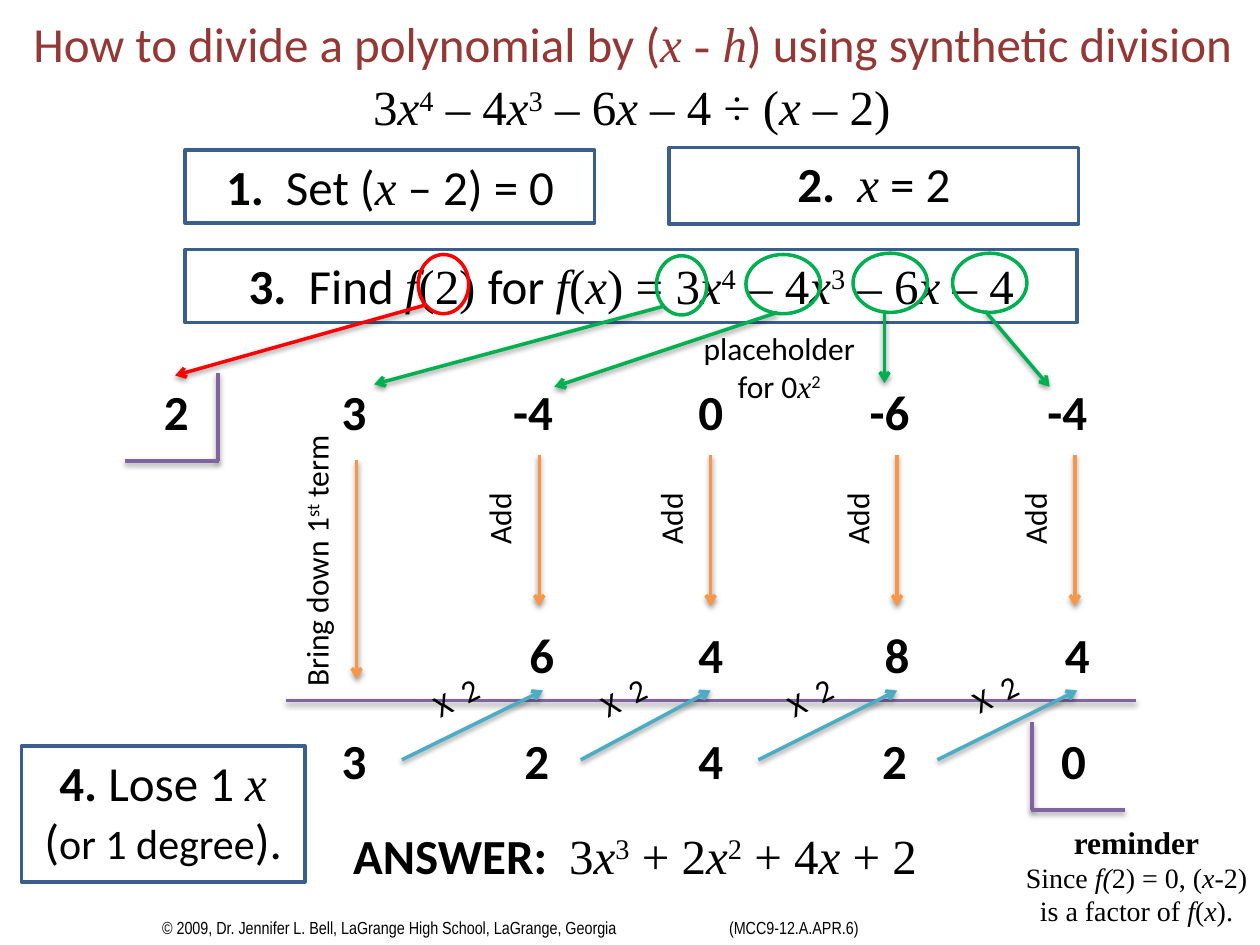
from itertools import groupby

from lxml import etree
from pptx import Presentation
from pptx.dml.color import RGBColor
from pptx.enum.shapes import MSO_CONNECTOR, MSO_SHAPE
from pptx.enum.text import PP_ALIGN
from pptx.oxml import parse_xml
from pptx.oxml.ns import nsdecls, qn
from pptx.util import Inches, Pt

BLACK = RGBColor(0x00, 0x00, 0x00)
MAROON = RGBColor(0x95, 0x37, 0x35)
NAVY = RGBColor(0x3A, 0x5F, 0x8C)
RED = RGBColor(0xFF, 0x00, 0x00)
GREEN = RGBColor(0x00, 0xB0, 0x50)
PURPLE = RGBColor(0x80, 0x64, 0xA2)
ORANGE = RGBColor(0xF7, 0x96, 0x46)
TEAL = RGBColor(0x4B, 0xAC, 0xC6)
SANS, SERIF, NARROW = "Calibri", "Times New Roman", "Arial Narrow"


def math(formula):
    """Split a formula into serif runs: letters italic, ^digit raised."""
    marked, raised = [], False
    for char in formula:
        if char == "^":
            raised = True
            continue
        marked.append((char, "t^" if raised else "ti" if char.isalpha() else "t"))
        raised = False
    return [("".join(c for c, _ in run), style)
            for style, run in groupby(marked, key=lambda pair: pair[1])]


# Content. A run is (text, style[, size]); styles: b bold, i italic, t serif, ^ raised
TITLE = [("How to divide a polynomial by (", ""), *math("x - h"),
         (") using synthetic division", "")]
PROBLEM = math("3x^4 – 4x^3 – 6x – 4 ÷ (x – 2)")
STEPS = [  # runs, left, top, width, text height, frame height
    ([("1.", "b"), ("  Set (", ""), *math("x"), (" – 2) = 0", "")],
     1.47, 1.19, 3.25, 0.57, 0.58),
    ([("2.  ", "b"), *math("x"), (" = 2", "")], 5.31, 1.17, 3.25, 0.57, 0.61),
    ([("3.", "b"), ("  Find ", ""), *math("f(2) "), ("for ", ""),
      *math("f(x) = 3x^4 – 4x^3 – 6x – 4")], 1.47, 1.98, 7.08, 0.57, 0.58),
    ([("4.", "b"), (" Lose 1 ", ""), *math("x"), (" (", ""),
      ("or 1 degree", "", 24), (").", "")], 0.17, 5.92, 2.25, 1.04, 1.08),
]
PLACEHOLDER = [[("placeholder", "")], [("for 0", ""), ("x", "ti"), ("2", "^")]]
BRING_DOWN = [("Bring down 1", ""), ("st", "^"), (" term", "")]
ANSWER = [("ANSWER:  ", "b"), *math("3x^3 + 2x^2 + 4x + 2")]
REMINDER = [[("reminder", "b", 18)],
            [("Since ", ""), ("f(", "i"), ("2) = 0, (", ""), ("x", "i"),
             ("-2) is a factor of ", ""), *math("f(x).")]]
CREDIT = [("© 2009, Dr. Jennifer L. Bell, LaGrange High School, LaGrange, Georgia"
           "\t\t(MCC9-12.A.APR.6)", "")]

# Division tableau: each number with the centre of its column
NUMBER_ROWS = [
    (2.98, [("2", 1.4), ("3", 2.81), ("-4", 4.23), ("0", 5.64), ("-6", 7.06), ("-4", 8.47)]),
    (4.91, [("6", 4.3), ("4", 5.64), ("8", 7.12), ("4", 8.55)]),
    (5.75, [("3", 2.81), ("2", 4.26), ("4", 5.64), ("2", 7.1), ("0", 8.52)]),
]
ADD_COLUMNS = [4.28, 5.64, 7.12, 8.53]
TIMES_STEPS = [  # arrow start x, arrow end x, label left, label top
    (3.19, 4.31, 2.96, 5.33), (4.61, 5.64, 4.29, 5.33),
    (6.02, 7.12, 5.77, 5.33), (7.44, 8.55, 7.24, 5.3)]
CIRCLED = [  # colour, circle left, top, width, arrow start, arrow end
    (RED, 3.32, 2.02, 0.4, (3.38, 2.42), (1.39, 2.98)),
    (GREEN, 5.21, 2.03, 0.4, (5.27, 2.43), (2.97, 3.05)),
    (GREEN, 5.92, 2.02, 0.59, (6.17, 2.48), (4.4, 3.07)),
    (GREEN, 6.77, 2.01, 0.59, (7.02, 2.47), (7.02, 3.04)),
    (GREEN, 7.56, 2.01, 0.59, (7.82, 2.47), (8.33, 3.07)),
]
RULES = [  # divisor corner, sum line, remainder corner
    ((1.73, 2.96), (1.73, 3.66)), ((0.99, 3.66), (1.74, 3.66)),
    ((2.27, 5.56), (9.02, 5.56)),
    ((8.19, 5.73), (8.19, 6.43)), ((8.93, 6.43), (8.18, 6.43)),
]

SHADOW = (f'<a:effectLst {nsdecls("a")}><a:outerShdw blurRad="39400" dist="20000" '
          'dir="5400000" rotWithShape="0"><a:srgbClr val="000000">'
          '<a:alpha val="38000"/></a:srgbClr></a:outerShdw></a:effectLst>')

prs = Presentation()
prs.slide_width, prs.slide_height = Inches(10), Inches(7.5)
slide = prs.slides.add_slide(prs.slide_layouts[6])
shapes = slide.shapes


def add_text(paragraphs, left, top, width, height, size=28, font=SANS,
             color=BLACK, align=PP_ALIGN.CENTER, rotation=0):
    box = shapes.add_textbox(*map(Inches, (left, top, width, height)))
    box.rotation = rotation
    frame = box.text_frame
    frame.word_wrap = True
    for i, runs in enumerate(paragraphs):
        para = frame.paragraphs[0] if i == 0 else frame.add_paragraph()
        para.alignment = align
        para.font.size, para.font.name = Pt(size), font
        para.font.color.rgb = color
        for text, style, *own_size in runs:
            run = para.add_run()
            run.text = text
            if "b" in style:
                run.font.bold = True
            if "i" in style:
                run.font.italic = True
            if "t" in style:
                run.font.name = SERIF
            if "^" in style:
                run.font._element.set("baseline", "30000")
            if own_size:
                run.font.size = Pt(own_size[0])


def add_outline(kind, left, top, width, height, color):
    shape = shapes.add_shape(kind, *map(Inches, (left, top, width, height)))
    shape.shadow.inherit = False
    shape.fill.background()
    shape.line.color.rgb = color
    shape.line.width = Pt(2)


def add_line(start, end, color, arrow=True):
    line = shapes.add_connector(MSO_CONNECTOR.STRAIGHT, *map(Inches, (*start, *end)))
    line.line.color.rgb = color
    line.line.width = Pt(2)
    if arrow:
        etree.SubElement(line.line._get_or_add_ln(), qn("a:tailEnd"), type="arrow")
    line._element.spPr.append(parse_xml(SHADOW))


# Heading and credit
add_text([CREDIT], 0, 7.23, 8.1, 0.27, size=10, font=NARROW)
add_text([TITLE], 0.02, 0.06, 10, 0.57, color=MAROON)
add_text([PROBLEM], 1.18, 0.56, 7.67, 0.57)

# Framed steps
for runs, left, top, width, text_height, frame_height in STEPS:
    add_text([runs], left, top, width, text_height)
    add_outline(MSO_SHAPE.RECTANGLE, left, top, width, frame_height, NAVY)

# Circled values and the arrows that bring them down
for color, left, top, width, start, end in CIRCLED:
    add_outline(MSO_SHAPE.OVAL, left, top, width, 0.47, color)
    add_line(start, end, color)
add_text(PLACEHOLDER, 5.1, 2.56, 2.17, 0.71, size=18)

# Tableau numbers and rules
for top, row in NUMBER_ROWS:
    for number, center in row:
        add_text([[(number, "b")]], center - 0.375, top, 0.75, 0.57)
for start, end in RULES:
    add_line(start, end, PURPLE, arrow=False)

# Bring down, add and multiply arrows
add_line((2.83, 3.65), (2.83, 5.39), ORANGE)
add_text([BRING_DOWN], 1.31, 4.13, 2.42, 0.42, size=18, align=PP_ALIGN.LEFT, rotation=270)
for x in ADD_COLUMNS:
    add_line((x, 3.61), (x, 4.81), ORANGE)
    add_text([[("Add", "")]], x - 0.97, 3.55, 1.32, 0.42, size=18,
             align=PP_ALIGN.LEFT, rotation=270)
for start_x, end_x, left, top in TIMES_STEPS:
    add_line((start_x, 6.03), (end_x, 5.48), TEAL)
    add_text([[("X  2", "")]], left, top, 1.32, 0.42, size=18, rotation=333.6)

# Result
add_text(REMINDER, 8.02, 6.48, 2, 0.94, size=16, font=SERIF)
add_text([ANSWER], 2.08, 6.5, 5.92, 0.57)

prs.save("out.pptx")
